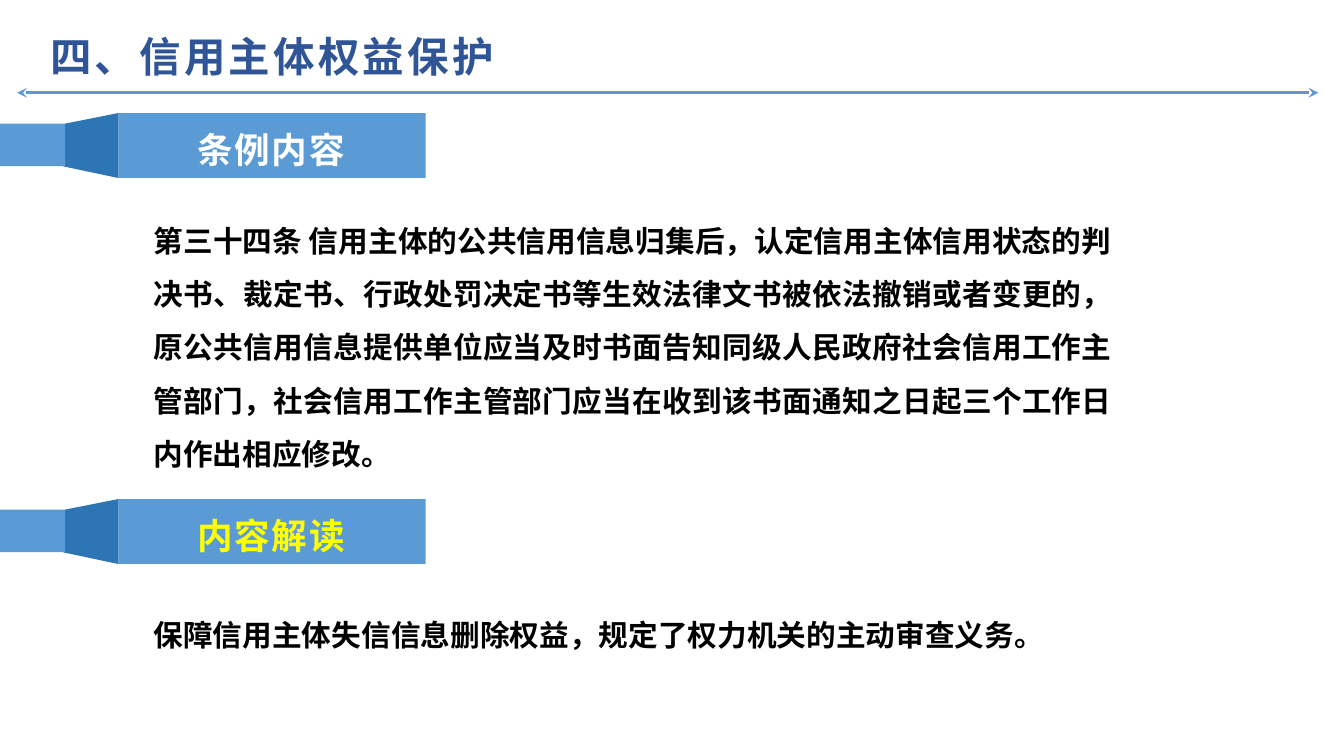
"""Build a slide on protecting the rights of credit subjects."""
from dataclasses import dataclass

from lxml.etree import SubElement
from pptx import Presentation
from pptx.dml.color import RGBColor
from pptx.enum.shapes import MSO_CONNECTOR, MSO_SHAPE
from pptx.enum.text import MSO_ANCHOR, MSO_AUTO_SIZE, PP_ALIGN
from pptx.oxml.ns import qn
from pptx.shapes.base import BaseShape
from pptx.slide import Slide
from pptx.util import Emu, Pt

EMU_PER_PX = 9144


@dataclass(frozen=True)
class Theme:
    font: str = "Noto Sans CJK SC"
    title: str = "2F5597"
    band: str = "5B9BD5"
    fold: str = "2E75B6"
    white: str = "FFFFFF"
    yellow: str = "FFFF00"
    body: str = "000000"
    title_size: int = 28
    label_size: int = 24
    body_size: int = 20
    rule_width: float = 2.25
    line_spacing: float = 1.5


@dataclass(frozen=True)
class Box:
    left: int
    top: int
    width: int
    height: int

    def emu(self) -> tuple[Emu, Emu, Emu, Emu]:
        return px(self.left), px(self.top), px(self.width), px(self.height)


@dataclass(frozen=True)
class TextStyle:
    size: int
    color: str
    align: PP_ALIGN
    tracking: int = 0


@dataclass(frozen=True)
class Section:
    top: int
    label: str
    label_color: str
    body: str
    body_box: Box


THEME = Theme()
TITLE_STYLE = TextStyle(THEME.title_size, THEME.title, PP_ALIGN.LEFT, 220)
BODY_STYLE = TextStyle(THEME.body_size, THEME.body, PP_ALIGN.JUSTIFY)
SECTIONS = (
    Section(
        106, "条例内容", THEME.white,
        "第三十四条 信用主体的公共信用信息归集后，认定信用主体信用状态的判决书、"
        "裁定书、行政处罚决定书等生效法律文书被依法撤销或者变更的，"
        "原公共信用信息提供单位应当及时书面告知同级人民政府社会信用工作主管部门，"
        "社会信用工作主管部门应当在收到该书面通知之日起三个工作日内作出相应修改。",
        Box(134, 187, 918, 262),
    ),
    Section(
        468, "内容解读", THEME.yellow,
        "保障信用主体失信信息删除权益，规定了权力机关的主动审查义务。",
        Box(134, 557, 999, 60),
    ),
)


def px(length: int) -> Emu:
    return Emu(length * EMU_PER_PX)


def paint(shape: BaseShape, color: str) -> None:
    shape.shadow.inherit = False
    shape.fill.solid()
    shape.fill.fore_color.rgb = RGBColor.from_string(color)
    shape.line.fill.background()


def write(shape: BaseShape, text: str, style: TextStyle) -> None:
    frame = shape.text_frame
    frame.word_wrap = True
    frame.auto_size = MSO_AUTO_SIZE.SHAPE_TO_FIT_TEXT
    frame.vertical_anchor = MSO_ANCHOR.TOP
    paragraph = frame.paragraphs[0]
    paragraph.text = text
    paragraph.alignment = style.align
    paragraph.line_spacing = THEME.line_spacing
    paragraph.space_before = Pt(0)
    font = paragraph.font
    font.name = THEME.font
    font.size = Pt(style.size)
    font.bold = True
    font.color.rgb = RGBColor.from_string(style.color)
    properties = paragraph._p.get_or_add_pPr()
    defaults = properties.find(qn("a:defRPr"))
    defaults.set("spc", str(style.tracking))
    SubElement(defaults, qn("a:ea"), typeface=THEME.font)


def fill_placeholder(shape: BaseShape, box: Box, text: str, style: TextStyle) -> None:
    shape.left, shape.top, shape.width, shape.height = box.emu()
    write(shape, text, style)
    properties = shape.text_frame.paragraphs[0]._p.get_or_add_pPr()
    properties.set("marL", "0")
    properties.set("indent", "0")
    properties.find(qn("a:defRPr")).addprevious(SubElement(properties, qn("a:buNone")))


def add_title(slide: Slide) -> None:
    title = slide.shapes.title
    fill_placeholder(title, Box(42, 3, 1168, 76), "四、信用主体权益保护", TITLE_STYLE)
    frame = title.text_frame
    frame.margin_left = frame.margin_right = px(5)
    frame.margin_top = frame.margin_bottom = px(3)


def add_rule(slide: Slide) -> None:
    rule = slide.shapes.add_connector(
        MSO_CONNECTOR.STRAIGHT, px(16), px(87), px(1236), px(87)
    )
    rule.line.color.rgb = RGBColor.from_string(THEME.band)
    rule.line.width = Pt(THEME.rule_width)
    line = rule.line._get_or_add_ln()
    for end in ("a:headEnd", "a:tailEnd"):
        SubElement(line, qn(end), type="stealth")
    SubElement(rule._element.spPr, qn("a:effectLst"))


def add_banner(slide: Slide, section: Section) -> None:
    shapes = slide.shapes.add_group_shape().shapes
    top = section.top
    front = Box(111, top, 288, 61)
    tail = Box(0, top + 10, 61, 40)

    paint(shapes.add_shape(MSO_SHAPE.RECTANGLE, *front.emu()), THEME.band)
    fold = shapes.build_freeform(59, top + 50, scale=EMU_PER_PX)
    fold.add_line_segments(
        [(61, top + 10), (111, top), (111, top + 61)], close=True
    )
    paint(fold.convert_to_shape(), THEME.fold)
    paint(shapes.add_shape(MSO_SHAPE.RECTANGLE, *tail.emu()), THEME.band)

    label = shapes.add_textbox(*Box(169, top - 11, 170, 71).emu())
    style = TextStyle(THEME.label_size, section.label_color, PP_ALIGN.CENTER, 120)
    write(label, section.label, style)


def main() -> None:
    presentation = Presentation()
    presentation.slide_width, presentation.slide_height = px(1260), px(709)
    two_content_layout = presentation.slide_layouts[3]
    slide = presentation.slides.add_slide(two_content_layout)
    add_title(slide)
    add_rule(slide)
    for index, section in enumerate(SECTIONS, start=1):
        add_banner(slide, section)
        body = slide.placeholders[index]
        fill_placeholder(body, section.body_box, section.body, BODY_STYLE)
    presentation.save("out.pptx")


if __name__ == "__main__":
    main()
